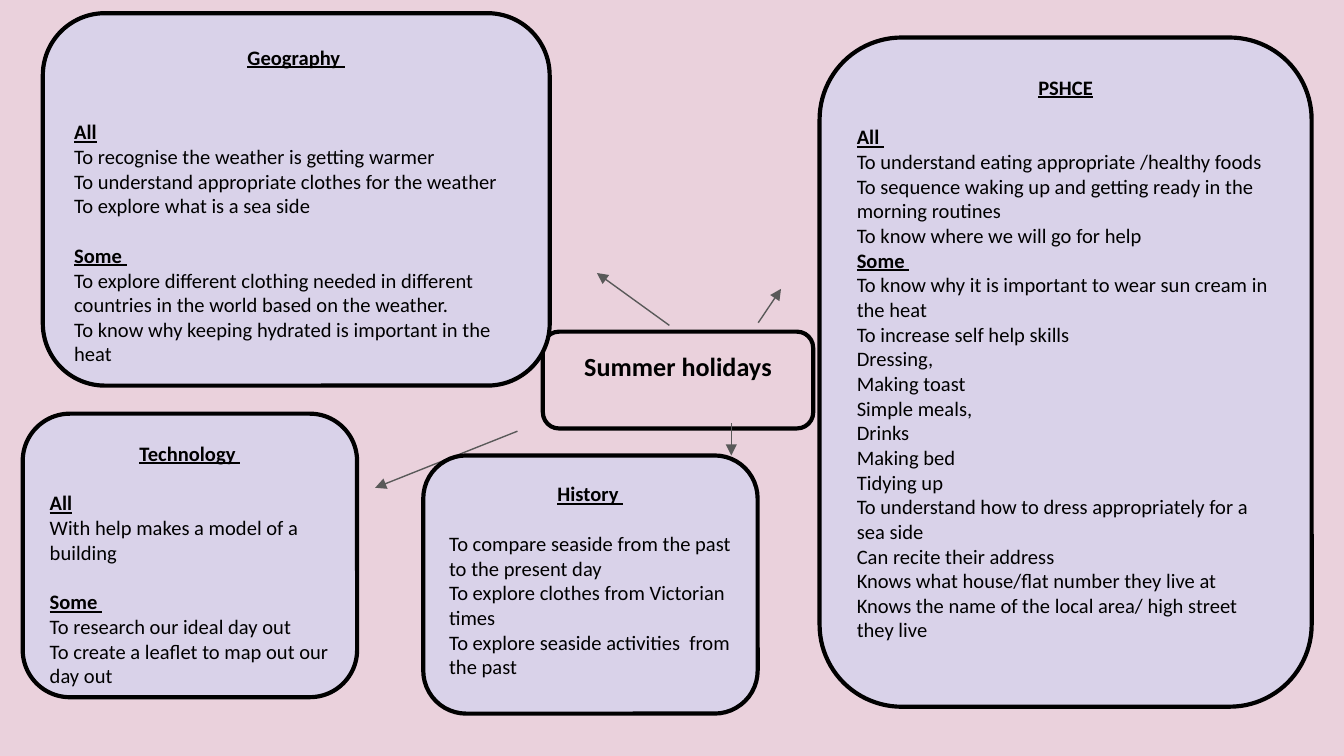
"""Build the Summer holidays topic map slide."""
from lxml.etree import SubElement
from pptx import Presentation
from pptx.dml.color import RGBColor
from pptx.enum.shapes import MSO_CONNECTOR, MSO_SHAPE
from pptx.enum.text import MSO_ANCHOR, MSO_AUTO_SIZE, PP_ALIGN
from pptx.oxml.ns import qn
from pptx.util import Cm, Pt

PINK = RGBColor(0xEA, 0xD1, 0xDC)
LILAC = RGBColor(0xD9, 0xD2, 0xE9)
BLACK = RGBColor(0, 0, 0)
GREY = RGBColor(0x59, 0x59, 0x59)

TOPIC_BOUNDS = (10.26, 6.27, 5.11, 1.83)

TECHNOLOGY = [
    ("All", 1, ["With help makes a model of a building"]),
    ("Some ", 1, [
        "To research our ideal day out",
        "To create a leaflet to map out our day out",
    ]),
]
PSHCE = [
    ("All ", 1, [
        "To understand eating appropriate /healthy foods",
        "To sequence waking up and getting ready in the morning routines",
        "To know where we will go for help",
    ]),
    ("Some ", 0, [
        "To know why it is important to wear sun cream in the heat",
        "To increase self help skills",
        "Dressing,",
        "Making toast",
        "Simple meals,",
        "Drinks",
        "Making bed",
        "Tidying up",
        "To understand how to dress appropriately for a sea side",
        "Can recite their address",
        "Knows what house/flat number they live at",
        "Knows the name of the local area/ high street they live",
    ]),
]
GEOGRAPHY = [
    ("All", 2, [
        "To recognise the weather is getting warmer",
        "To understand appropriate clothes for the weather",
        "To explore what is a sea side",
    ]),
    ("Some ", 1, [
        "To explore different clothing needed in different countries in the world based on the weather.",
        "To know why keeping hydrated is important in the heat",
    ]),
]
HISTORY = [
    (None, 1, [
        "To compare seaside from the past to the present day",
        "To explore clothes from Victorian times",
        "To explore seaside activities  from the past",
    ]),
]


class TopicMap:
    """Hold the style and the current slide."""

    body = {"name": "Calibri", "size": Pt(11), "bold": False, "underline": False}
    heading = {**body, "bold": True, "underline": True}
    topic = {**body, "size": Pt(14), "bold": True}
    frame = {"word_wrap": True, "auto_size": MSO_AUTO_SIZE.NONE,
             "vertical_anchor": MSO_ANCHOR.TOP, "margin_left": Cm(0.25),
             "margin_top": Cm(0.25), "margin_right": Cm(0.25),
             "margin_bottom": Cm(0.25)}
    topic_frame = {**frame, "vertical_anchor": MSO_ANCHOR.MIDDLE,
                   "margin_bottom": Cm(0.77)}
    line_height = 13.4

    def __init__(self, deck):
        self.slide = deck.slides.add_slide(deck.slide_layouts[5])
        fill = self.slide.background.fill
        fill.solid()
        fill.fore_color.rgb = PINK

    def apply(self, target, values):
        for name, value in values.items():
            setattr(target, name, value)

    def add_text(self, para, text, style, align=PP_ALIGN.LEFT, gap=0):
        para.alignment = align
        para.space_before = Pt(gap * self.line_height)
        span = para.add_run()
        span.text = text
        self.apply(span.font, style)
        span.font.color.rgb = BLACK

    def title(self, text, bounds):
        box = self.slide.shapes.title
        sides = ("left", "top", "width", "height")
        self.apply(box, dict(zip(sides, map(Cm, bounds))))
        self.apply(box.text_frame, self.topic_frame)
        self.add_text(box.text_frame.paragraphs[0], text, self.topic, PP_ALIGN.CENTER)

    def rounded_box(self, bounds, colour=None):
        box = self.slide.shapes.add_shape(
            MSO_SHAPE.ROUNDED_RECTANGLE, *map(Cm, bounds))
        box.shadow.inherit = False
        if colour is None:
            box.fill.background()
        else:
            box.fill.solid()
            box.fill.fore_color.rgb = colour
        box.line.color.rgb = BLACK
        box.line.width = Pt(2.25)
        return box

    def panel(self, subject, bounds, sections):
        text_frame = self.rounded_box(bounds, LILAC).text_frame
        self.apply(text_frame, self.frame)
        self.add_text(text_frame.paragraphs[0], subject, self.heading, PP_ALIGN.CENTER)
        for heading, gap, aims in sections:
            lines = [(heading, self.heading)] if heading else []
            lines += [(aim, self.body) for aim in aims]
            for index, (text, style) in enumerate(lines):
                para = text_frame.add_paragraph()
                self.add_text(para, text, style, gap=0 if index else gap)

    def arrow(self, *ends):
        connector = self.slide.shapes.add_connector(
            MSO_CONNECTOR.STRAIGHT, *map(Cm, ends))
        connector.line.color.rgb = GREY
        connector.line.width = Pt(0.75)
        SubElement(connector.get_or_add_ln(), qn("a:tailEnd"), type="triangle")
        SubElement(connector.element.spPr, qn("a:effectLst"))


def main():
    deck = Presentation()
    deck.slide_width, deck.slide_height = Cm(25.4), Cm(14.29)
    page = TopicMap(deck)
    page.title("Summer holidays", TOPIC_BOUNDS)
    page.rounded_box(TOPIC_BOUNDS)
    page.panel("Technology ", (0.43, 7.82, 6.32, 5.36), TECHNOLOGY)
    page.arrow(14.33, 6.1, 14.76, 5.46)
    page.arrow(9.78, 8.15, 7.09, 9.22)
    page.panel("PSHCE", (15.49, 0.71, 9.3, 12.65), PSHCE)
    page.panel("Geography ", (0.81, 0.25, 9.58, 7.04), GEOGRAPHY)
    page.arrow(12.65, 6.15, 11.28, 5.16)
    page.arrow(13.82, 8, 13.82, 8.61)
    page.panel("History ", (8, 8.61, 6.32, 4.88), HISTORY)
    deck.save("out.pptx")


if __name__ == "__main__":
    main()
